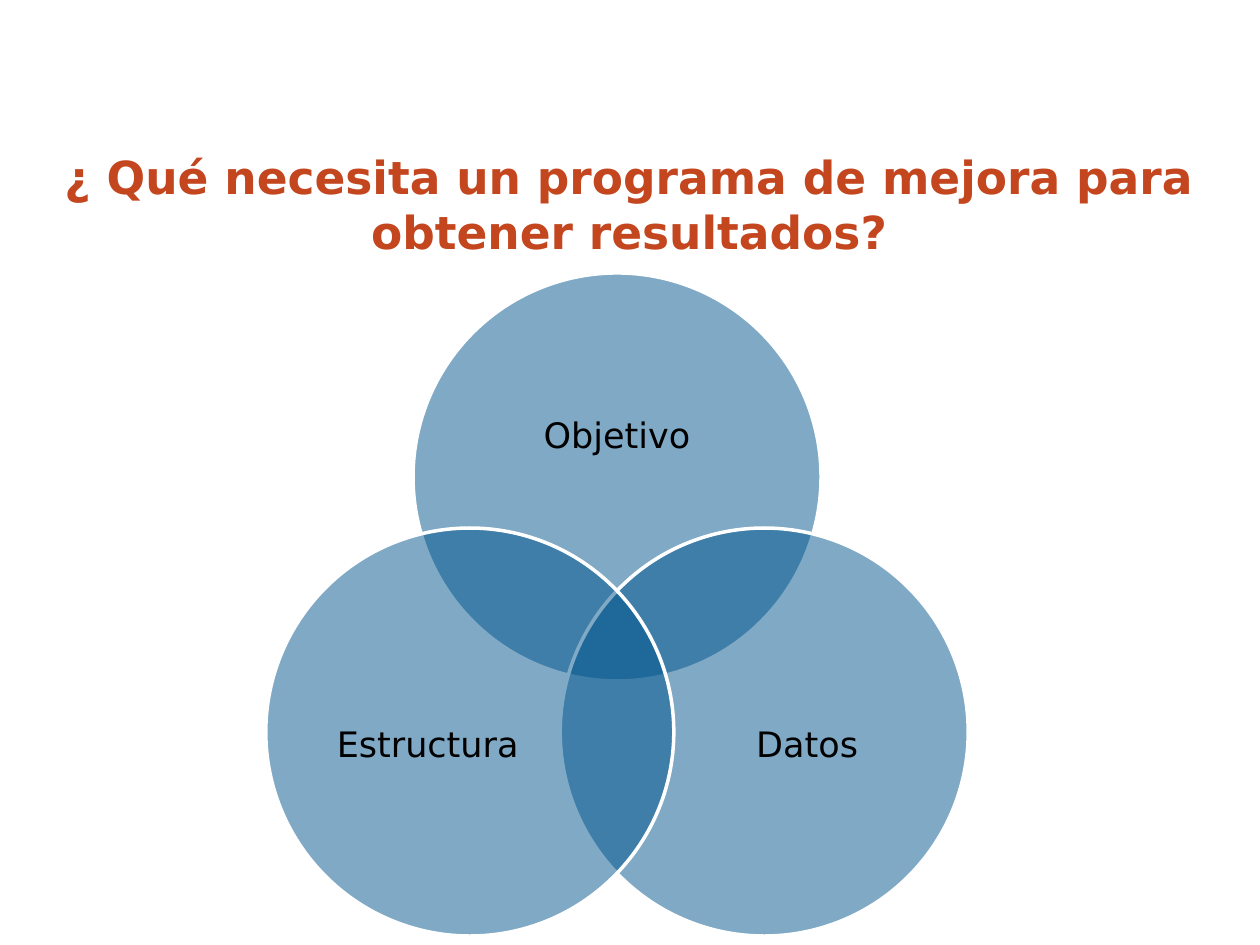
import math

from lxml import etree
from pptx import Presentation
from pptx import util as u
from pptx.dml.color import RGBColor
from pptx.enum import shapes, text
from pptx.oxml.ns import qn

PX = u.Inches(1) / 126
FONT = "DejaVu Sans"
ORANGE = RGBColor(0xC3, 0x46, 0x1E)
BLUE = RGBColor(0x00, 0x55, 0x8D)
WHITE = RGBColor(0xFF, 0xFF, 0xFF)
BLACK = RGBColor(0x00, 0x00, 0x00)

DIAMETER = 408
ORBIT = 170
CIRCLES = [
    ("Objetivo", -90, (54, 72, 300, 184)),
    ("Datos", 30, (124, 106, 246, 224)),
    ("Estructura", 150, (39, 106, 246, 224)),
]


def px(*lengths):
    return [u.Emu(round(length * PX)) for length in lengths]


def write(shape, wording, size, color, anchor, bold=False):
    frame = shape.text_frame
    frame.text = wording
    frame.word_wrap = True
    frame.auto_size = text.MSO_AUTO_SIZE.NONE
    frame.vertical_anchor = anchor
    frame.margin_left = frame.margin_top = frame.margin_right = frame.margin_bottom = 0
    para = frame.paragraphs[0]
    para.alignment = text.PP_ALIGN.CENTER
    font = para.runs[0].font
    font.name = FONT
    font.size = u.Pt(size)
    font.bold = bold
    font.color.rgb = color
    return para


def place_title(page, left, top, width, height):
    title = page.shapes.title
    title.left, title.top, title.width, title.height = px(left, top, width, height)
    write(title, "¿ Qué necesita un programa de mejora para obtener resultados?",
          26, ORANGE, text.MSO_ANCHOR.TOP, bold=True)


def add_circle(group, left, top):
    circle = group.shapes.add_shape(
        shapes.MSO_SHAPE.OVAL, *px(left, top, DIAMETER, DIAMETER))
    circle.shadow.inherit = False
    circle.fill.solid()
    circle.fill.fore_color.rgb = BLUE
    fill_color = circle.fill._xPr.find(qn("a:solidFill"))[0]
    etree.SubElement(fill_color, qn("a:alpha"), val="50000")
    circle.line.color.rgb = WHITE
    circle.line.width = u.Pt(2)


def place_venn(page, center_x, center_y):
    group = page.shapes.add_group_shape()
    for label, degrees, (dx, dy, width, height) in CIRCLES:
        angle = math.radians(degrees)
        left = center_x + ORBIT * math.cos(angle) - DIAMETER / 2
        top = center_y + ORBIT * math.sin(angle) - DIAMETER / 2
        add_circle(group, left, top)
        box = group.shapes.add_textbox(*px(left + dx, top + dy, width, height))
        para = write(box, label, 20, BLACK, text.MSO_ANCHOR.MIDDLE)
        para.line_spacing = 0.9


def main():
    deck = Presentation()
    deck.slide_width, deck.slide_height = px(1260, 945)
    page = deck.slides.add_slide(deck.slide_layouts[5])
    place_title(page, 64, 149, 1131, 64)
    place_venn(page, 617, 647)
    deck.save("out.pptx")


if __name__ == "__main__":
    main()
